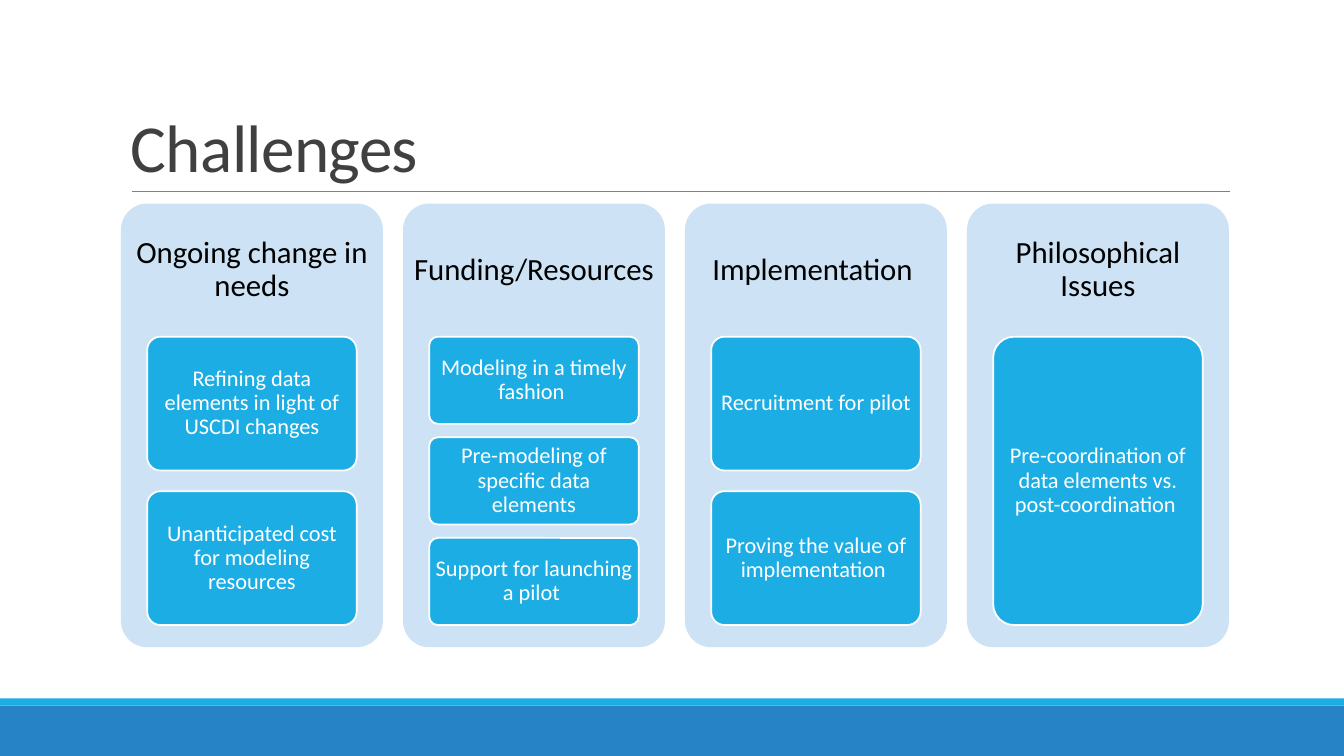
import pptx
import pptx.util
import pptx.dml.color
import pptx.enum.shapes
import pptx.enum.text
import pptx.oxml.ns
from lxml import etree

Cm = pptx.util.Cm
Pt = pptx.util.Pt
SHAPE = pptx.enum.shapes.MSO_SHAPE
ANCHOR = pptx.enum.text.MSO_ANCHOR
ALIGN = pptx.enum.text.PP_ALIGN

COLORS = {
    "title": "404040", "rule": "808080", "head": "000000",
    "panel": "CDE3F5", "card": "1CADE4", "white": "FFFFFF",
    "stripe": "1CADE4", "foot": "2683C6",
}
WIDTH, HEIGHT = 33.87, 19.05
GAP = 2 / 13  # space between cards, as a share of card height

COLUMNS = [
    ("Ongoing change in needs",
     ["Refining data elements in light of USCDI changes",
      "Unanticipated cost for modeling resources"]),
    ("Funding/Resources",
     ["Modeling in a timely fashion ",
      "Pre-modeling of specific data elements",
      "Support for launching a pilot "]),
    ("Implementation ",
     ["Recruitment for pilot ",
      "Proving the value of implementation "]),
    ("Philosophical Issues",
     ["Pre-coordination of data elements vs. post-coordination "]),
]


def color(name):
    return pptx.dml.color.RGBColor.from_string(COLORS[name])


def write(shape, text, size, ink, pad, anchor=ANCHOR.MIDDLE,
          align=ALIGN.CENTER, lead=0.9):
    """Fill a shape with one paragraph; pad is (side, top and bottom) in cm."""
    frame = shape.text_frame
    side, edge = Cm(pad[0]), Cm(pad[1])
    look = {"word_wrap": True, "vertical_anchor": anchor,
            "margin_left": side, "margin_right": side,
            "margin_top": edge, "margin_bottom": edge}
    for key, value in look.items():
        setattr(frame, key, value)
    para = frame.paragraphs[0]
    para.alignment, para.line_spacing = align, lead
    run = para.add_run()
    run.text = text
    for key, value in {"name": "Calibri", "size": Pt(size)}.items():
        setattr(run.font, key, value)
    run.font.color.rgb = color(ink)
    return run


def block(slide, kind, box, fill, line=None):
    """Add a flat shape, with an outline only if a line colour is named."""
    shape = slide.shapes.add_shape(kind, *map(Cm, box))
    shape.shadow.inherit = False
    shape.fill.solid()
    shape.fill.fore_color.rgb = color(fill)
    if line:
        shape.line.color.rgb = color(line)
        shape.line.width = Pt(1.25)
    else:
        shape.line.fill.background()
    if kind == SHAPE.ROUNDED_RECTANGLE:
        shape.adjustments[0] = 0.1
    return shape


def footer(slide, left, top, width, height):
    stripe = 0.18
    block(slide, SHAPE.RECTANGLE,
          (left, top + stripe, width, height - stripe), "foot")
    block(slide, SHAPE.RECTANGLE, (left, top, width, stripe), "stripe")


def header(slide, left, top, width, height):
    base = top + height
    rule = slide.shapes.add_connector(
        pptx.enum.shapes.MSO_CONNECTOR.STRAIGHT,
        Cm(left + 0.27), Cm(base), Cm(left + width), Cm(base))
    rule.line.color.rgb = color("rule")
    rule.line.width = Pt(0.5)
    etree.SubElement(rule._element.spPr, pptx.oxml.ns.qn("a:effectLst"))
    title = slide.shapes.add_textbox(*map(Cm, (left, top, width, height)))
    run = write(title, "Challenges", 48, "title", (0.25, 0.13),
                ANCHOR.BOTTOM, ALIGN.LEFT, 0.85)
    run._r.get_or_add_rPr().set("spc", "-50")


def column(slide, left, top, width, height, head, cards):
    """Draw a panel with its heading and a stack of equal cards."""
    block(slide, SHAPE.ROUNDED_RECTANGLE, (left, top, width, height), "panel")
    cap = height * 0.3
    label = slide.shapes.add_textbox(*map(Cm, (left, top, width, cap)))
    write(label, head, 22, "head", (0.23, 0.23))
    tall = height * 0.65 / (len(cards) * (1 + GAP) - GAP)
    for i, text in enumerate(cards):
        box = (left + width * 0.1, top + cap + i * tall * (1 + GAP),
               width * 0.8, tall)
        card = block(slide, SHAPE.ROUNDED_RECTANGLE, box, "card", "white")
        write(card, text, 16, "white", (0.1, 0.08))


def board(slide, left, top, width, height):
    """Spread the columns evenly over the box."""
    wide = 6.6
    step = (width - wide) / (len(COLUMNS) - 1)
    for i, (head, cards) in enumerate(COLUMNS):
        column(slide, left + i * step, top, wide, height, head, cards)


def main():
    deck = pptx.Presentation()
    deck.slide_width, deck.slide_height = Cm(WIDTH), Cm(HEIGHT)
    slide = deck.slides.add_slide(deck.slide_layouts[6])
    footer(slide, 0, 17.6, WIDTH, HEIGHT - 17.6)
    header(slide, 3.05, 0.79, 27.94, 4.03)
    board(slide, 3.05, 5.13, 27.92, 11.18)
    deck.save("out.pptx")


if __name__ == "__main__":
    main()
